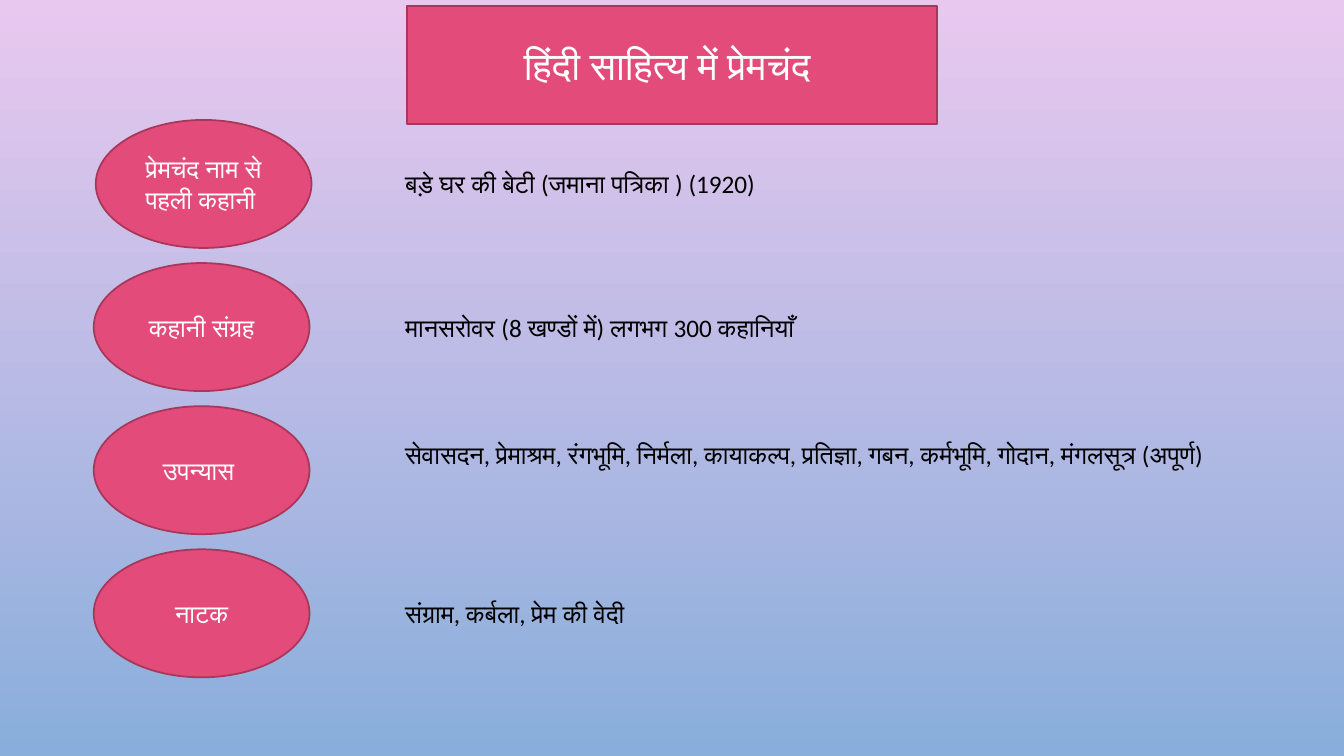
from dataclasses import dataclass

from pptx import Presentation
from pptx import util as u
from pptx.dml.color import RGBColor
from pptx.enum import shapes, text


@dataclass(frozen=True)
class Theme:
    font: str = "Calibri"
    title_size: int = 28
    body_size: int = 18
    line_width: float = 1.25
    fill: str = "E34B7A"
    line: str = "A8375A"
    light: str = "FFFFFF"
    dark: str = "000000"
    sky_top: str = "E9C8EF"
    sky_bottom: str = "89AEDB"


THEME = Theme()
SLIDE_W, SLIDE_H = 13.33, 7.5

# Row grid: topic ovals on the left, works on the right
ROW_TOP, ROW_PITCH = 1.19, 1.42
OVAL_W, OVAL_H = 2.14, 1.27
WORKS_X = 3.92

# Topic, works, oval left, works width, works height
ROWS = [
    ("प्रेमचंद नाम से पहली कहानी ", "बड़े घर की बेटी (जमाना पत्रिका ) (1920)", 0.95, 4.78, 0.4),
    ("कहानी संग्रह", "मानसरोवर (8 खण्डों में) लगभग 300 कहानियाँ", 0.93, 5.11, 0.4),
    ("उपन्यास ", "सेवासदन, प्रेमाश्रम, रंगभूमि, निर्मला, कायाकल्प, प्रतिज्ञा, "
     "गबन, कर्मभूमि, गोदान, मंगलसूत्र (अपूर्ण)", 0.93, 8.61, 0.71),
    ("नाटक", "संग्राम, कर्बला, प्रेम की वेदी", 0.93, 5.11, 0.4),
]


def rgb(value):
    return RGBColor.from_string(value)


def inches(*lengths):
    return [u.Inches(n) for n in lengths]


def write(sp, words, size, color, align, anchor):
    tf = sp.text_frame
    tf.word_wrap = True
    tf.vertical_anchor = anchor
    p = tf.paragraphs[0]
    p.alignment = align
    r = p.add_run()
    r.text = words
    r.font.name = THEME.font
    r.font.size = u.Pt(size)
    r.font.color.rgb = rgb(color)


def paint(sp):
    sp.fill.solid()
    sp.fill.fore_color.rgb = rgb(THEME.fill)
    sp.line.color.rgb = rgb(THEME.line)
    sp.line.width = u.Pt(THEME.line_width)


def add_background(s):
    fill = s.background.fill
    fill.gradient()
    fill.gradient_angle = 270
    for stop, color in zip(fill.gradient_stops, (THEME.sky_top, THEME.sky_bottom)):
        stop.color.rgb = rgb(color)


def add_title(s, words, x, y, w, h):
    sp = s.shapes.title
    sp.left, sp.top, sp.width, sp.height = inches(x, y, w, h)
    paint(sp)
    sp.text_frame.auto_size = text.MSO_AUTO_SIZE.NONE
    write(sp, words, THEME.title_size, THEME.light,
          text.PP_ALIGN.CENTER, text.MSO_ANCHOR.MIDDLE)


def add_row(s, topic, works, x, y, works_w, works_h):
    # Topic oval
    sp = s.shapes.add_shape(shapes.MSO_SHAPE.OVAL, *inches(x, y, OVAL_W, OVAL_H))
    sp.shadow.inherit = False
    paint(sp)
    write(sp, topic, THEME.body_size, THEME.light,
          text.PP_ALIGN.CENTER, text.MSO_ANCHOR.MIDDLE)

    # Works, centred on the height of the oval
    works_y = y + (OVAL_H - works_h) / 2
    sp = s.shapes.add_textbox(*inches(WORKS_X, works_y, works_w, works_h))
    sp.text_frame.auto_size = text.MSO_AUTO_SIZE.SHAPE_TO_FIT_TEXT
    write(sp, works, THEME.body_size, THEME.dark,
          text.PP_ALIGN.LEFT, text.MSO_ANCHOR.TOP)


def main():
    prs = Presentation()
    prs.slide_width, prs.slide_height = inches(SLIDE_W, SLIDE_H)
    s = prs.slides.add_slide(prs.slide_layouts[5])
    add_background(s)
    add_title(s, "हिंदी साहित्य में प्रेमचंद ", 4.04, 0.06, 5.25, 1.17)
    for i, (topic, works, x, works_w, works_h) in enumerate(ROWS):
        add_row(s, topic, works, x, ROW_TOP + i * ROW_PITCH, works_w, works_h)
    prs.save("out.pptx")


if __name__ == "__main__":
    main()
